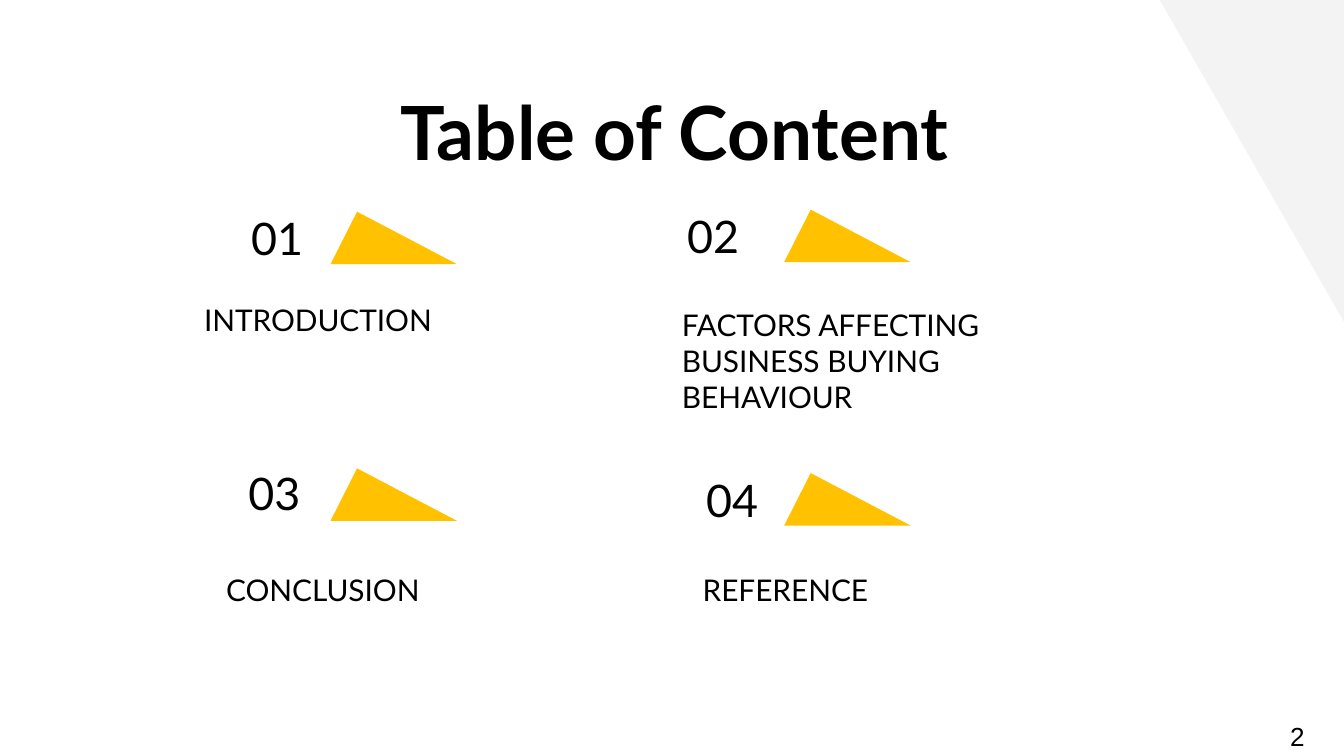
"""Build a table of contents slide with four numbered entries."""
from dataclasses import dataclass

from pptx import Presentation, util as u
from pptx.dml.color import RGBColor
from pptx.enum import shapes, text

PX = u.Inches(1) // 200


@dataclass(frozen=True)
class Theme:
    """Colours, fonts and type sizes of the slide."""
    ink: RGBColor = RGBColor(0x00, 0x00, 0x00)
    accent: RGBColor = RGBColor(0xFF, 0xC1, 0x00)
    corner: RGBColor = RGBColor(0xF3, 0xF3, 0xF3)
    font: str = "Lato"
    page_font: str = "Arial"
    title: int = 40
    number: int = 24
    label: int = 16
    page: int = 14


THEME = Theme()
MARKER_W, ROW_H = 188, 78
ENTRIES = [
    ("01", (354, 314), (492, 315), "INTRODUCTION", (284, 429, 472)),
    ("02", (1003, 312), (1167, 312), "FACTORS AFFECTING BUSINESS BUYING BEHAVIOUR",
     (995, 437, 534)),
    ("03", (350, 694), (492, 697), "CONCLUSION", (317, 830, 472)),
    ("04", (1031, 704), (1167, 704), "REFERENCE", (1026, 830, 472)),
]


def px(*values):
    """Turn px lengths into EMU."""
    return [v * PX for v in values]


def write(sp, words, size, font=THEME.font, bold=False, inset=20,
          anchor=text.MSO_ANCHOR.TOP):
    """Put one formatted paragraph into a shape and return it."""
    tf = sp.text_frame
    tf.text = words
    tf.word_wrap = True
    tf.auto_size = text.MSO_AUTO_SIZE.NONE
    tf.vertical_anchor = anchor
    tf.margin_left = tf.margin_right = tf.margin_top = tf.margin_bottom = inset * PX
    p = tf.paragraphs[0]
    f = p.runs[0].font
    f.name, f.size, f.bold = font, u.Pt(size), bold
    f.color.rgb = THEME.ink
    return p


def add_title(s, words):
    """Place and format the title placeholder."""
    sp = s.shapes.title
    sp.left, sp.top, sp.width, sp.height = px(118, 108, 1771, 126)
    p = write(sp, words, THEME.title, bold=True)
    p.alignment = text.PP_ALIGN.CENTER


def add_triangle(s, kind, box, color):
    """Add a plain filled triangle and return it."""
    sp = s.shapes.add_shape(kind, *px(*box))
    sp.shadow.inherit = False
    sp.fill.solid()
    sp.fill.fore_color.rgb = color
    sp.line.fill.background()
    return sp


def add_entry(s, number, number_at, marker_at, label, label_at):
    """Add one entry: marker, number and label."""
    marker = add_triangle(s, shapes.MSO_SHAPE.ISOSCELES_TRIANGLE,
                          (*marker_at, MARKER_W, ROW_H), THEME.accent)
    marker.adjustments[0] = 0.21
    write(s.shapes.add_textbox(*px(*number_at, 236, ROW_H)), number,
          THEME.number, anchor=text.MSO_ANCHOR.MIDDLE)
    p = write(s.shapes.add_textbox(*px(*label_at, ROW_H)), label, THEME.label)
    p.space_after = u.Pt(16)


def add_page_number(s, number):
    """Add the page number at the bottom right."""
    sp = s.shapes.add_textbox(*px(1900, 1062, 62, 67))
    write(sp, number, THEME.page, font=THEME.page_font, inset=10)
    sp.text_frame.margin_left = sp.text_frame.margin_right = 20 * PX
    sp.text_frame.word_wrap = False
    sp.text_frame.auto_size = text.MSO_AUTO_SIZE.SHAPE_TO_FIT_TEXT


def main():
    """Build and save the slide."""
    prs = Presentation()
    prs.slide_width, prs.slide_height = px(2000, 1125)
    s = prs.slides.add_slide(prs.slide_layouts.get_by_name("Title Only"))
    corner = add_triangle(s, shapes.MSO_SHAPE.RIGHT_TRIANGLE,
                          (1726, 0, 274, 479), THEME.corner)
    corner.rotation = 180
    add_title(s, "Table of Content")
    for entry in ENTRIES:
        add_entry(s, *entry)
    add_page_number(s, "2")
    prs.save("out.pptx")


if __name__ == "__main__":
    main()
